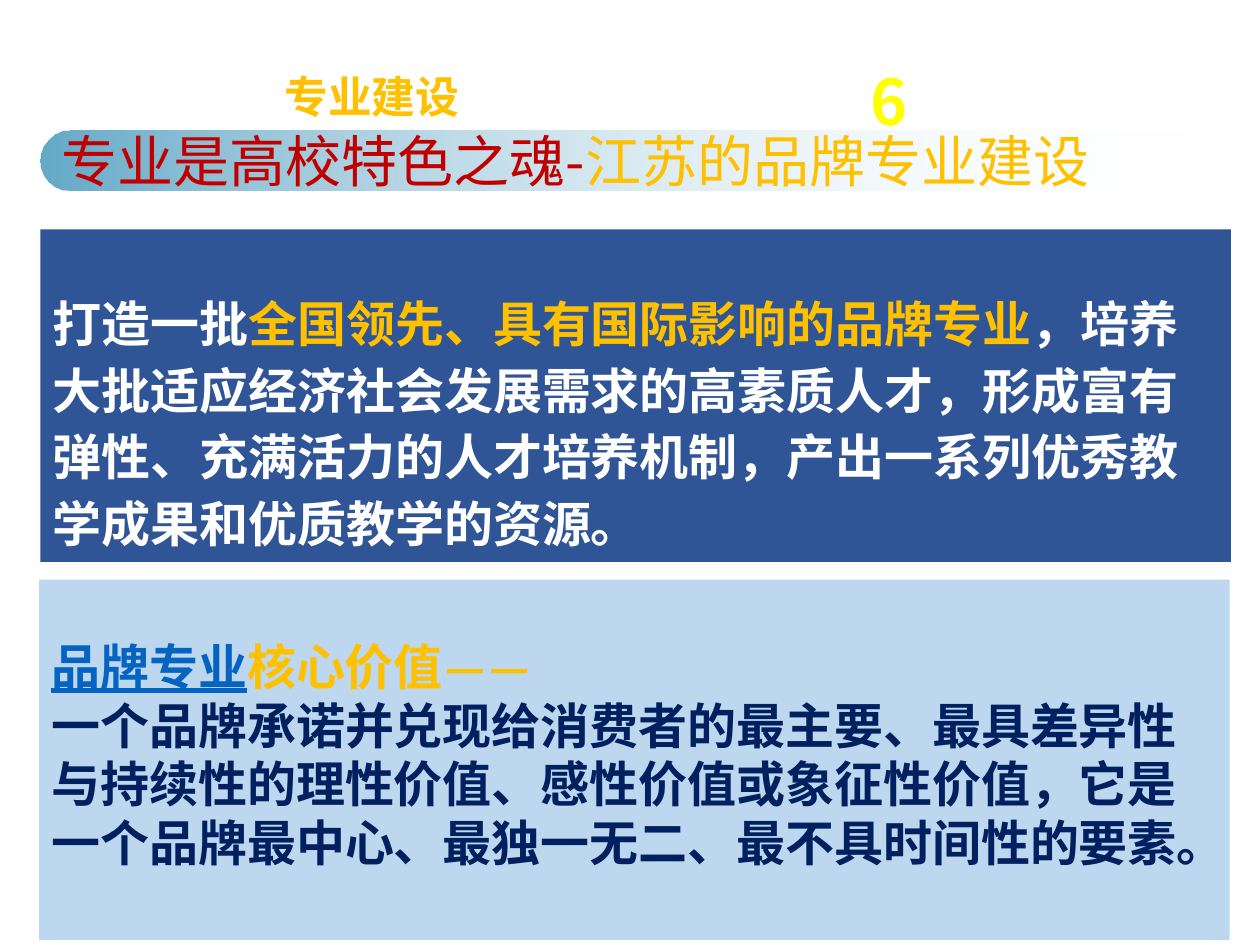
from lxml import etree
from pptx import Presentation
from pptx.dml.color import RGBColor
from pptx.enum.shapes import MSO_SHAPE
from pptx.enum.text import MSO_ANCHOR, PP_ALIGN
from pptx.oxml.ns import qn
from pptx.util import Inches, Pt

RECT = MSO_SHAPE.RECTANGLE
ROUND = MSO_SHAPE.ROUNDED_RECTANGLE
TOP = MSO_ANCHOR.TOP
MID = MSO_ANCHOR.MIDDLE
LEFT = PP_ALIGN.LEFT

COLORS = {
    "gold": "FFC000", "red": "C00000", "yellow": "FFFF00",
    "white": "FFFFFF", "teal": "2284B0", "blue": "2F5597",
    "pale": "BDD7EE", "link": "0563C1", "navy": "002060",
}


def rgb(name):
    return RGBColor.from_string(COLORS[name])


def write(para, text, size=28, font="Calibri", color="white", bold=True, under=False):
    run = para.add_run()
    run.text = text
    face = run.font
    face.size, face.name = Pt(size), font
    face.bold, face.underline = bold, under
    face.color.rgb = rgb(color)
    east = etree.SubElement(face._element, qn("a:ea"))
    east.set("typeface", font)


class Deck:
    def __init__(self, slide):
        self.slide = slide

    def fill_text(self, shape, paras, anchor=TOP, top=0.05, wrap=True, line=None, **style):
        frame = shape.text_frame
        frame.word_wrap = wrap
        frame.vertical_anchor = anchor
        frame.margin_top = Inches(top)
        for i, runs in enumerate(paras):
            para = frame.add_paragraph() if i else frame.paragraphs[0]
            para.alignment = LEFT
            if line:
                para.line_spacing = line
            for text, color in runs:
                write(para, text, color=color, under=color == "link", **style)

    def label(self, area, text, color, **style):
        box = self.slide.shapes.add_textbox(*map(Inches, area))
        self.fill_text(box, [[(text, color)]], **style)

    def shape(self, kind, area):
        shape = self.slide.shapes.add_shape(kind, *map(Inches, area))
        shape.shadow.inherit = False
        shape.line.fill.background()
        return shape

    def panel(self, area, color, paras, **style):
        box = self.shape(RECT, area)
        box.fill.solid()
        box.fill.fore_color.rgb = rgb(color)
        self.fill_text(box, paras, top=0.45, **style)

    def banner(self, area, fades, runs, **style):
        bar = self.shape(ROUND, area)
        bar.adjustments[0] = 0.5
        bar.fill.gradient()
        bar.fill.gradient_angle = 0
        for i, (stop, (color, alpha)) in enumerate(zip(bar.fill.gradient_stops, fades)):
            stop.position = i
            stop.color.rgb = rgb(color)
            tint = stop._gs.find(qn("a:srgbClr"))
            etree.SubElement(tint, qn("a:alpha")).set("val", str(alpha * 1000))
        self.fill_text(bar, [runs], anchor=MID, wrap=False, **style)


def main():
    prs = Presentation()
    prs.slide_width, prs.slide_height = Inches(10), Inches(7.5)
    deck = Deck(prs.slides.add_slide(prs.slide_layouts[6]))

    deck.label((2.16, 0.35, 3.53, 0.87), "专业建设", "gold",
               anchor=MID, line=0.9, size=25, font="Arial")
    deck.banner((0.32, 1.04, 9.27, 0.47), [("teal", 70), ("white", 0)],
                [("专业是高校特色之魂-", "red"), ("江苏的品牌专业建设", "gold")],
                size=32, font="Noto Sans CJK SC", bold=False)
    deck.label((6.81, 0.45, 0.49, 0.71), "6", "yellow",
               size=36, font="Noto Sans CJK JP")
    deck.panel((0.32, 1.82, 9.45, 2.64), "blue", [[
        ("打造一批", "white"),
        ("全国领先、具有国际影响的品牌专业", "gold"),
        ("，培养大批适应经济社会发展需求的高素质人才，形成富有弹性、"
         "充满活力的人才培养机制，产出一系列优秀教学成果和优质教学的资源。", "white"),
    ]], line=Pt(38))
    deck.panel((0.31, 4.6, 9.45, 2.86), "pale", [
        [("品牌专业", "link"), ("核心价值——", "gold")],
        [("一个品牌承诺并兑现给消费者的最主要、最具差异性与持续性的理性价值、"
          "感性价值或象征性价值，它是一个品牌最中心、最独一无二、"
          "最不具时间性的要素。", "navy")],
    ])
    prs.save("out.pptx")


if __name__ == "__main__":
    main()
